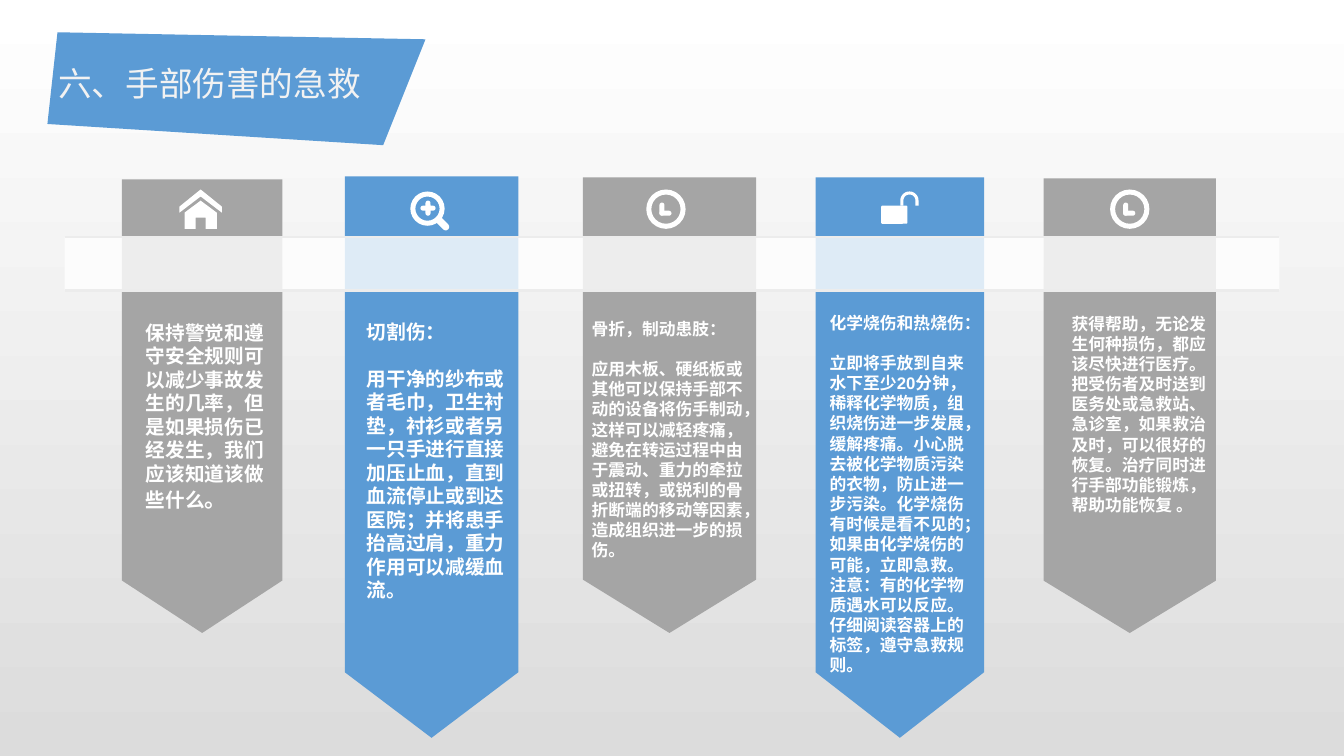
import math
from lxml import etree
from pptx import Presentation
from pptx import util as u
from pptx.dml import color
from pptx.enum import shapes, text
from pptx.oxml import ns

COLOURS = {"blue": "5B9BD5", "grey": "A5A5A5", "white": "FFFFFF", "title": "F2F2F2",
           "rule": "ECECEC", "bottom": "DCDCDC"}
FONT = "Arial"
UNITS = 1000
KIND = shapes.MSO_SHAPE

# left, width, top, shoulder, tip, colour
RIBBONS = [
    (1.21, 1.59, 1.78, 5.76, 6.28, "grey"),
    (3.42, 1.72, 1.75, 6.67, 7.32, "blue"),
    (5.78, 1.72, 1.76, 5.75, 6.28, "grey"),
    (8.09, 1.67, 1.76, 6.67, 7.32, "blue"),
    (10.35, 1.71, 1.77, 5.76, 6.28, "grey"),
]

# left, top, width, height, size, paragraphs
ADVICE = [
    (1.35, 3.13, 1.4, 2.02, 14,
     ["保持警觉和遵守安全规则可以减少事故发生的几率，但是如果损伤已经发生，我们应该知道该做些什么。"]),
    (3.54, 3.12, 1.61, 2.93, 14,
     ["切割伤：",
      "用干净的纱布或者毛巾，卫生衬垫，衬衫或者另一只手进行直接加压止血，直到血流停止或到达医院；"
      "并将患手抬高过肩，重力作用可以减缓血流。"]),
    (5.77, 3.11, 1.72, 2.52, 12,
     ["骨折，制动患肢：",
      "应用木板、硬纸板或其他可以保持手部不动的设备将伤手制动，这样可以减轻疼痛，"
      "避免在转运过程中由于震动、重力的牵拉或扭转，或锐利的骨折断端的移动等因素，造成组织进一步的损伤。"]),
    (8.13, 3.05, 1.63, 3.74, 12,
     ["化学烧伤和热烧伤：",
      "立即将手放到自来水下至少20分钟，稀释化学物质，组织烧伤进一步发展，缓解疼痛。"
      "小心脱去被化学物质污染的衣物，防止进一步污染。化学烧伤有时候是看不见的；"
      "如果由化学烧伤的可能，立即急救。注意：有的化学物质遇水可以反应。"
      "仔细阅读容器上的标签，遵守急救规则。"]),
    (10.53, 3.06, 1.53, 2.52, 12,
     ["获得帮助，无论发生何种损伤，都应该尽快进行医疗。把受伤者及时送到医务处或急救站、急诊室，"
      "如果救治及时，可以很好的恢复。治疗同时进行手部功能锻炼，帮助功能恢复 。"]),
]


def rgb(name):
    return color.RGBColor.from_string(COLOURS[name])


def paint(shape, name):
    shape.shadow.inherit = False
    shape.fill.solid()
    shape.fill.fore_color.rgb = rgb(name)
    shape.line.fill.background()
    return shape


def add_outline(page, points, name):
    scaled = [(x * UNITS, y * UNITS) for x, y in points]
    builder = page.shapes.build_freeform(*scaled[0], scale=u.Inches(1) / UNITS)
    builder.add_line_segments(scaled[1:], close=True)
    return paint(builder.convert_to_shape(), name)


def add_preset(page, kind, left, top, width, height, name="white"):
    shape = page.shapes.add_shape(
        kind, u.Inches(left), u.Inches(top), u.Inches(width), u.Inches(height))
    return paint(shape, name)


def add_bar(page, left, top, width, height):
    bar = add_preset(page, KIND.ROUNDED_RECTANGLE, left, top, width, height)
    bar.adjustments[0] = 0.5
    return bar


def add_ring(page, left, top, size, thickness):
    ring = add_preset(page, KIND.DONUT, left, top, size, size)
    ring.adjustments[0] = thickness / size


def add_text(page, left, top, width, height, size, lines, name="white", bold=True):
    box = page.shapes.add_textbox(
        u.Inches(left), u.Inches(top), u.Inches(width), u.Inches(height))
    frame = box.text_frame
    frame.word_wrap = True
    frame.auto_size = text.MSO_AUTO_SIZE.SHAPE_TO_FIT_TEXT
    frame.text = "\n".join(lines)
    for para in frame.paragraphs:
        for span in para.runs:
            span.font.name = FONT
            span.font.size = u.Pt(size)
            span.font.bold = bold
            span.font.color.rgb = rgb(name)
    for para in frame.paragraphs[:-1]:
        para.space_after = u.Pt(size * 1.2)
    return frame


def add_ribbon(page, left, width, top, shoulder, tip, name):
    right = left + width
    add_outline(page, [(left, top), (right, top), (right, shoulder),
                       (left + width / 2, tip), (left, shoulder)], name)


def add_rule(page, left, right, y):
    rule = page.shapes.add_connector(
        shapes.MSO_CONNECTOR.STRAIGHT,
        u.Inches(left), u.Inches(y), u.Inches(right), u.Inches(y))
    rule.line.color.rgb = rgb("rule")
    rule.line.width = u.Pt(1.75)
    etree.SubElement(rule._element.spPr, ns.qn("a:effectLst"))


def add_band(page, left, top, width, height):
    band = add_preset(page, KIND.RECTANGLE, left, top, width, height)
    tint = band._element.spPr.find(ns.qn("a:solidFill"))[0]
    etree.SubElement(tint, ns.qn("a:alpha"), val="80000")
    for y in (top, top + height):
        add_rule(page, left, left + width, y)


def add_house(page, middle, top):
    roof = [(0, 0), (0.21, 0.17), (0.21, 0.23), (0, 0.07), (-0.21, 0.23), (-0.21, 0.17)]
    walls = [(0, 0.11), (0.16, 0.23), (0.16, 0.39), (0.05, 0.39), (0.05, 0.28),
             (-0.05, 0.28), (-0.05, 0.39), (-0.16, 0.39), (-0.16, 0.23)]
    for part in (roof, walls):
        add_outline(page, [(middle + x, top + y) for x, y in part], "white")


def add_magnifier(page, left, top):
    add_ring(page, left, top, 0.34, 0.05)
    add_bar(page, left + 0.23, top + 0.28, 0.17, 0.07).rotation = 45
    add_bar(page, left + 0.1, top + 0.14, 0.15, 0.05)
    add_bar(page, left + 0.15, top + 0.09, 0.05, 0.15)


def add_clock(page, left, top):
    add_ring(page, left, top, 0.39, 0.05)
    add_bar(page, left + 0.13, top + 0.13, 0.05, 0.13)
    add_bar(page, left + 0.13, top + 0.21, 0.12, 0.05)


def add_padlock(page, left, top):
    body = add_preset(page, KIND.ROUNDED_RECTANGLE, left, top + 0.15, 0.26, 0.18)
    body.adjustments[0] = 0.06
    middle, centre, foot = left + 0.28, top + 0.1, top + 0.15

    def arc(radius):
        angles = [math.radians(step) for step in range(180, 361, 10)]
        curve = [(middle + radius * math.cos(a), centre + radius * math.sin(a))
                 for a in angles]
        return [(middle - radius, foot), *curve, (middle + radius, foot)]

    add_outline(page, arc(0.09) + arc(0.06)[::-1], "white")


def add_title(page, title):
    add_outline(page, [(0.57, 0.32), (4.22, 0.39), (3.8, 1.44), (0.47, 1.23)], "blue")
    add_text(page, 0.48, 0.58, 3.64, 0.5, 24, [title], "title", False)


def set_backdrop(page):
    fill = page.background.fill
    fill.gradient()
    fill.gradient_angle = 270
    for stop, position, name in zip(fill.gradient_stops, (0, 1), ("white", "bottom")):
        stop.position = position
        stop.color.rgb = rgb(name)


def main():
    deck = Presentation()
    deck.slide_width, deck.slide_height = u.Inches(13.33), u.Inches(7.5)
    page = deck.slides.add_slide(deck.slide_layouts[6])
    set_backdrop(page)
    for ribbon in RIBBONS:
        add_ribbon(page, *ribbon)
    add_band(page, 0.64, 2.35, 12.05, 0.53)
    add_house(page, 1.99, 1.88)
    add_magnifier(page, 4.07, 1.9)
    add_clock(page, 6.41, 1.88)
    add_padlock(page, 8.74, 1.89)
    add_clock(page, 11.01, 1.88)
    for advice in ADVICE:
        add_text(page, *advice)
    closing = page.shapes[-5].text_frame.paragraphs[0]
    sentence = closing.runs[0]
    sentence.text = sentence.text.removesuffix("。")
    stop = closing.add_run()
    stop.text = "。"
    stop.font.name = FONT
    stop.font.size = u.Pt(16)
    stop.font.bold = True
    stop.font.color.rgb = rgb("white")
    add_title(page, "六、手部伤害的急救")
    deck.save("out.pptx")


if __name__ == "__main__":
    main()
